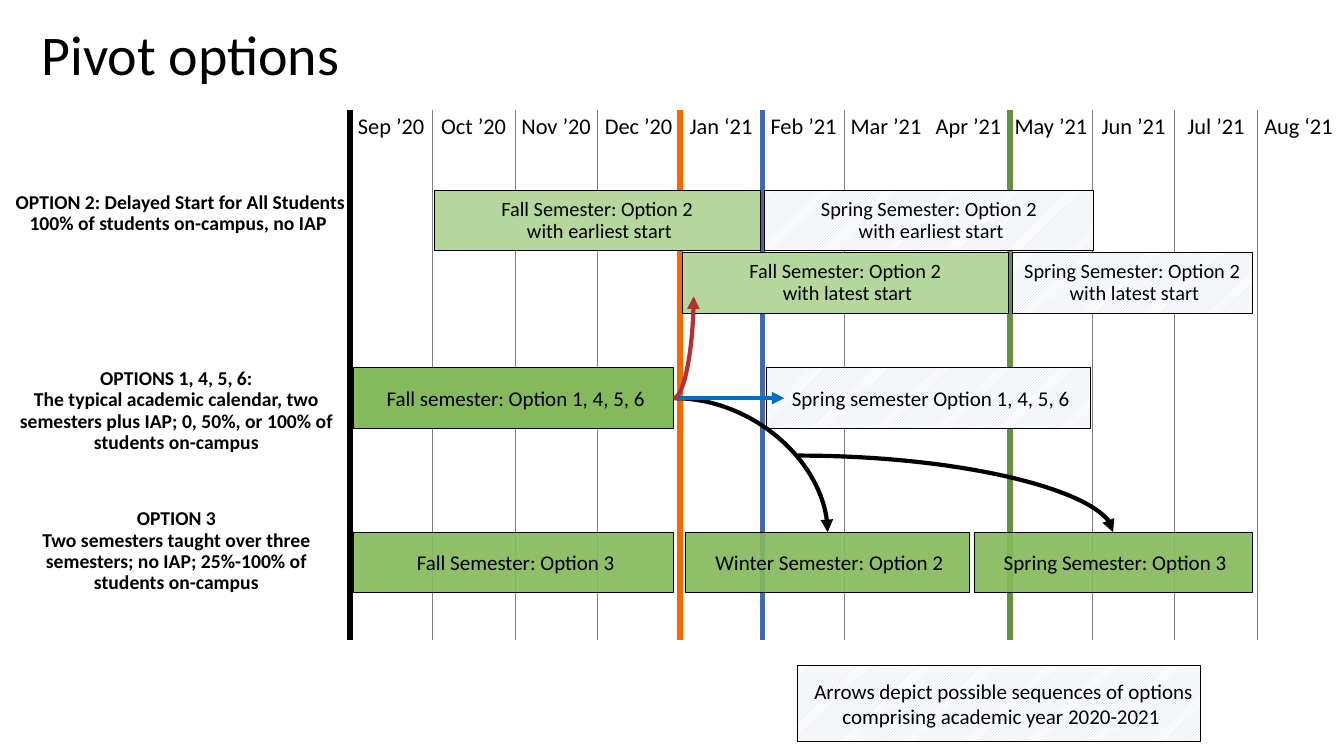
import copy

import lxml.etree
import pptx
import pptx.dml.color
import pptx.enum.dml
import pptx.enum.shapes
import pptx.enum.text
import pptx.oxml.ns
import pptx.util

Inches = pptx.util.Inches
Pt = pptx.util.Pt
qn = pptx.oxml.ns.qn
ALIGN = pptx.enum.text.PP_ALIGN
ANCHOR = pptx.enum.text.MSO_ANCHOR

COLORS = {
    "black": "000000", "white": "FFFFFF", "grid": "808080",
    "orange": "F86800", "blue": "4069AE", "green": "62923E",
    "full": "84BA5B", "pale": "B5D69D", "hatch": "C7D4EA",
    "sky": "0070C0", "red": "B43133",
}
FONT = "Calibri"
NO_GRID_STYLE = "{2D5ABB26-0587-4C30-8999-92F81FD0307C}"
MONTHS = ["Sep ’20", "Oct ’20", "Nov ’20", "Dec ’20", "Jan ‘21", "Feb ’21",
          "Mar ’21", "Apr ’21", "May ’21", "Jun ’21", "Jul ’21", "Aug ‘21"]
MONTH_LINES = ["black", "grid", "grid", "grid", "orange", "blue", "grid",
               None, "green", "grid", "grid", "grid", None]
ROW_HEIGHTS = [0.3] + [0.83] * 5 + [0.78]

BAR_HEIGHT = 0.6
EARLY, LATE, TYPICAL, THREE_TERM = 1.89, 2.51, 3.65, 5.28
BARS = [
    ("Fall Semester: Option 2 \vwith earliest start", 4.31, EARLY, 3.23, "pale"),
    ("Spring Semester: Option 2 \vwith earliest start", 7.58, EARLY, 3.27, "hatch"),
    ("Fall Semester: Option 2 \vwith latest start", 6.77, LATE, 3.23, "pale"),
    ("Spring Semester: Option 2 \vwith latest start", 10.04, LATE, 2.38, "hatch"),
    ("Spring semester Option 1, 4, 5, 6", 7.6, TYPICAL, 3.22, "hatch"),
    ("Spring Semester: Option 3", 9.66, THREE_TERM, 2.76, "sheer"),
    ("Winter Semester: Option 2", 6.8, THREE_TERM, 2.81, "sheer"),
    ("Fall Semester: Option 3", 3.51, THREE_TERM, 3.17, "sheer"),
]
LABELS = [
    ("OPTION 2: Delayed Start for All Students\n"
     "100% of students on-campus, no IAP ", 0.04, 1.86, 0.74),
    ("OPTIONS 1, 4, 5, 6:\nThe typical academic calendar, two semesters "
     "plus IAP; 0, 50%, or 100% of students on-campus", 0, 3.61, 0.95),
    ("OPTION 3\nTwo semesters taught over three semesters; no IAP; "
     "25%-100% of students on-campus", 0, 5, 0.95),
]


def rgb(name):
    return pptx.dml.color.RGBColor.from_string(COLORS[name])


def write(frame, text, size, align=ALIGN.CENTER, bold=False, spacing=None):
    frame.text = text
    for paragraph in frame.paragraphs:
        paragraph.alignment = align
        if spacing:
            paragraph.line_spacing = spacing
        for run in paragraph.runs:
            run.font.name = FONT
            run.font.size = Pt(size)
            run.font.bold = bold
            run.font.color.rgb = rgb("black")
        for line_break in paragraph._p.findall(qn("a:br")):
            line_break.append(copy.deepcopy(paragraph.runs[0]._r.rPr))


def add_border(cell, side, name):
    line = lxml.etree.SubElement(cell._tc.get_or_add_tcPr(), qn(f"a:ln{side}"))
    if name is None:
        lxml.etree.SubElement(line, qn("a:noFill"))
        return
    line.set("w", str(Pt(0.5 if name == "grid" else 4.5)))
    fill = lxml.etree.SubElement(line, qn("a:solidFill"))
    lxml.etree.SubElement(fill, qn("a:srgbClr")).set("val", COLORS[name])


def add_calendar(slide):
    calendar = slide.shapes.add_table(
        len(ROW_HEIGHTS), len(MONTHS), Inches(3.47), Inches(1.09),
        Inches(9.82), Inches(sum(ROW_HEIGHTS))).table
    calendar.first_row = False
    calendar.horz_banding = False
    calendar._tbl.tblPr.find(qn("a:tableStyleId")).text = NO_GRID_STYLE
    for row, height in zip(calendar.rows, ROW_HEIGHTS):
        row.height = Inches(height)
        for month, cell in enumerate(row.cells):
            add_border(cell, "L", MONTH_LINES[month])
            add_border(cell, "R", MONTH_LINES[month + 1])
            cell.fill.background()
            cell.margin_left = cell.margin_right = Inches(0.03)
            cell.margin_top = cell.margin_bottom = Inches(0.03)
    for month, name in enumerate(MONTHS):
        write(calendar.cell(0, month).text_frame, name, 16)


def add_bar(slide, text, left, top, width, style, height=BAR_HEIGHT):
    bar = slide.shapes.add_shape(
        pptx.enum.shapes.MSO_SHAPE.RECTANGLE,
        Inches(left), Inches(top), Inches(width), Inches(height))
    bar.shadow.inherit = False
    if style == "hatch":
        bar.fill.patterned()
        bar.fill.pattern = pptx.enum.dml.MSO_PATTERN.LIGHT_UPWARD_DIAGONAL
        bar.fill.fore_color.rgb = rgb("hatch")
        bar.fill.back_color.rgb = rgb("white")
    else:
        bar.fill.solid()
        bar.fill.fore_color.rgb = rgb("full" if style == "sheer" else style)
    if style == "sheer":
        shade = bar._element.spPr.find(qn("a:solidFill"))[0]
        lxml.etree.SubElement(shade, qn("a:alpha")).set("val", "91000")
    bar.line.color.rgb = rgb("black")
    bar.line.width = Pt(0.5 if style == "sheer" else 0.75)
    frame = bar.text_frame
    frame.word_wrap = True
    frame.vertical_anchor = ANCHOR.MIDDLE
    frame.margin_left = Inches(0.05)
    frame.margin_right = frame.margin_top = frame.margin_bottom = Inches(0.01)
    two_lines = "\v" in text
    write(frame, text, 14.5 if two_lines else 15,
          spacing=0.9 if two_lines else None)
    return bar


def add_label(slide, text, left, top, height):
    label = slide.shapes.add_textbox(
        Inches(left), Inches(top), Inches(3.5), Inches(height))
    label.text_frame.word_wrap = True
    label.text_frame.auto_size = pptx.enum.text.MSO_AUTO_SIZE.SHAPE_TO_FIT_TEXT
    write(label.text_frame, text, 14, bold=True, spacing=0.9)


def add_arrow(slide, start, end, color, curved=True):
    kinds = pptx.enum.shapes.MSO_CONNECTOR
    arrow = slide.shapes.add_connector(
        kinds.CURVE if curved else kinds.STRAIGHT,
        Inches(start[0]), Inches(start[1]), Inches(end[0]), Inches(end[1]))
    properties = arrow._element.spPr
    if curved:
        properties.find(qn("a:prstGeom")).set("prst", "curvedConnector2")
    arrow.line.color.rgb = rgb(color)
    arrow.line.width = Pt(3)
    head = lxml.etree.SubElement(arrow.line._get_or_add_ln(), qn("a:tailEnd"))
    head.set("type", "triangle")
    lxml.etree.SubElement(properties, qn("a:effectLst"))
    return arrow


def add_title(slide):
    title = slide.shapes.title
    title.left, title.top = Inches(0.31), Inches(0.14)
    title.width, title.height = Inches(3.26), Inches(0.77)
    title.text_frame.word_wrap = False
    title.text_frame.auto_size = pptx.enum.text.MSO_AUTO_SIZE.SHAPE_TO_FIT_TEXT
    title.text_frame.vertical_anchor = ANCHOR.TOP
    write(title.text_frame, "Pivot options", 40, ALIGN.LEFT)


def main():
    deck = pptx.Presentation()
    deck.slide_width, deck.slide_height = Inches(13.33), Inches(7.5)
    slide = deck.slides.add_slide(deck.slide_layouts[5])
    add_title(slide)
    add_calendar(slide)
    typical_fall = add_bar(
        slide, "Fall semester: Option 1, 4, 5, 6", 3.51, TYPICAL, 3.17, "full")
    for bar in BARS:
        add_bar(slide, *bar)
    for label in LABELS:
        add_label(slide, *label)
    fall_end = (6.68, 3.95)
    add_arrow(slide, fall_end, (8.21, THREE_TERM), "black")
    add_arrow(slide, (7.91, 4.52), (11.04, THREE_TERM), "black")
    to_spring = add_arrow(slide, fall_end, (7.78, 3.95), "sky", curved=False)
    to_spring.begin_connect(typical_fall, 3)
    add_arrow(slide, fall_end, (6.88, 2.94), "red")
    add_bar(slide, " Arrows depict possible sequences of options comprising "
            "academic year 2020-2021", 7.91, 6.6, 4, "hatch", 0.76)
    deck.save("out.pptx")


if __name__ == "__main__":
    main()
